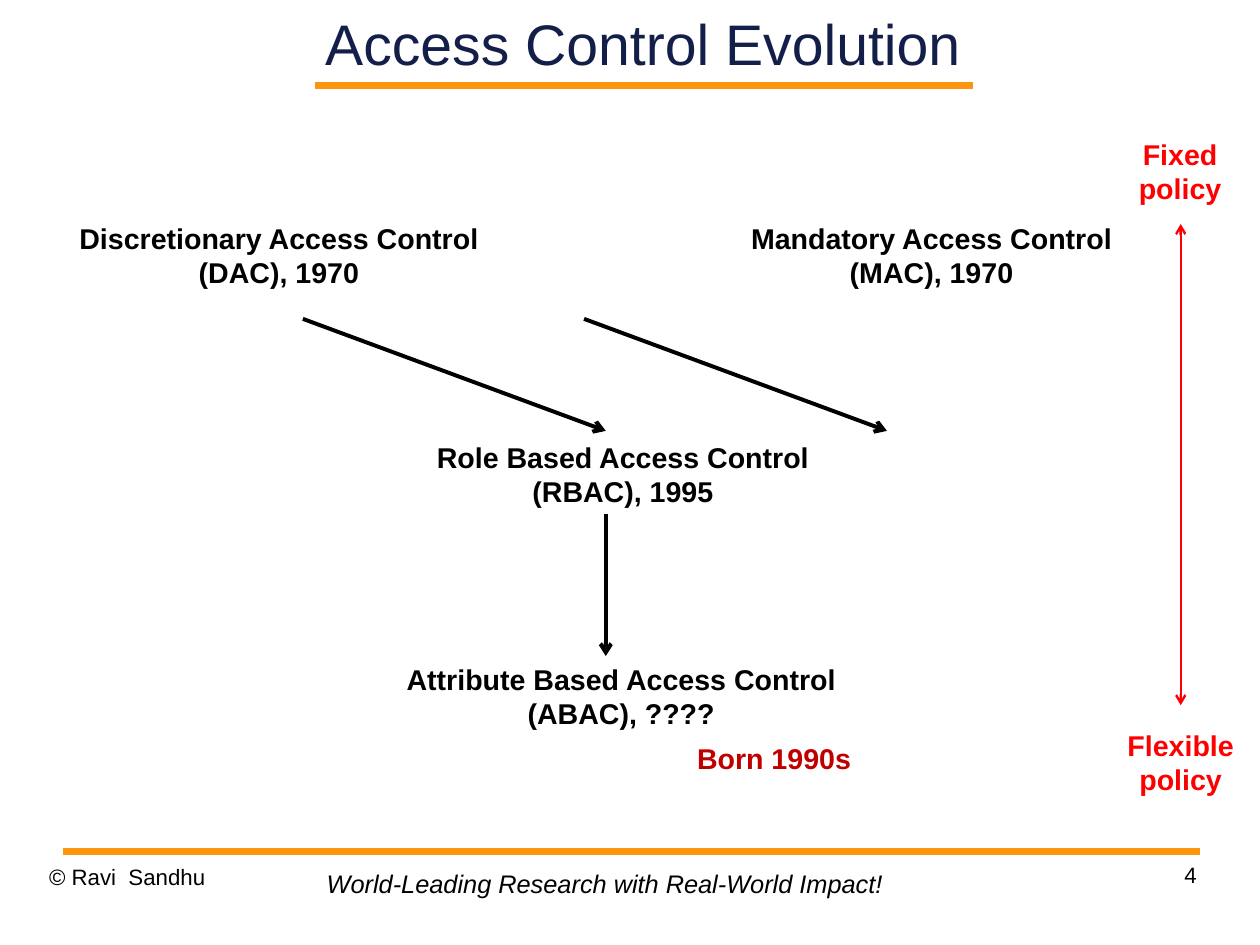
import pptx
import pptx.util
import pptx.dml.color
import pptx.enum.shapes
import pptx.enum.text
from lxml import etree

Inches, Pt = pptx.util.Inches, pptx.util.Pt
RGB = pptx.dml.color.RGBColor
ALIGN = pptx.enum.text.PP_ALIGN
ANCHOR = pptx.enum.text.MSO_ANCHOR

BLACK = RGB(0x00, 0x00, 0x00)
NAVY = RGB(0x13, 0x1F, 0x49)
ORANGE = RGB(0xFF, 0x95, 0x0E)
RED = RGB(0xFF, 0x00, 0x00)
DARK = RGB(0xC0, 0x00, 0x00)
FONT = "Arial"
PAD = (0.1, 0.05)

# Slide size: 28 by 21 cm, in inches
WIDE, HIGH = 28 / 2.54, 21 / 2.54

# Content: text and box (left, top, width, height)
TITLE = ("Access Control Evolution", (2.41, 0, 6.43, 0.75))
MODELS = [
    ("Discretionary Access Control (DAC), 1970", (0.59, 1.88, 3.7, 0.71)),
    ("Mandatory Access Control (MAC), 1970", (6.3, 1.88, 3.7, 0.71)),
    ("Role Based Access Control (RBAC), 1995", (3.6, 3.8, 3.7, 0.71)),
    ("Attribute Based Access Control (ABAC), ????", (3.38, 5.74, 4.11, 0.71)),
]
BORN = ("Born 1990s", (6, 6.43, 1.56, 0.4))
POLICY = [
    ("Fixed\npolicy", (9.86, 1.15, 0.93, 0.71)),
    ("Flexible\npolicy", (9.76, 6.32, 1.14, 0.71)),
]
OWNER = ("© Ravi  Sandhu", (0.43, 7.55, 2.57, 0.57))
NUMBER = ("4", (7.9, 7.53, 2.57, 0.57))
MOTTO = ("World-Leading Research with Real-World Impact!",
         (2.76, 7.55, 5.08, 0.37))

# Lines: start and end points
RULES = [((2.76, 0.75), (8.51, 0.75)), ((0.55, 7.45), (10.5, 7.45))]
STEPS = [
    ((2.65, 2.79), (5.3, 3.77)),
    ((5.11, 2.79), (7.76, 3.77)),
    ((5.3, 4.5), (5.3, 5.74)),
]
SCALE = ((10.33, 1.96), (10.33, 6.17))


def add_text(slide, text, box, size=18, color=BLACK, bold=False, italic=False,
             align=ALIGN.LEFT, anchor=ANCHOR.TOP, pad=PAD, wrap=True,
             space=None):
    frame = slide.shapes.add_textbox(*map(Inches, box)).text_frame
    frame.word_wrap = wrap
    frame.vertical_anchor = anchor
    frame.margin_left = frame.margin_right = Inches(pad[0])
    frame.margin_top = frame.margin_bottom = Inches(pad[1])
    frame.text = text
    for para in frame.paragraphs:
        para.alignment = align
        if space:
            para.line_spacing = space
        for run in para.runs:
            font = run.font
            font.name, font.size = FONT, Pt(size)
            font.bold, font.italic = bold, italic
            font.color.rgb = color


def add_line(slide, start, end, color, width, heads=()):
    kind = pptx.enum.shapes.MSO_CONNECTOR.STRAIGHT
    line = slide.shapes.add_connector(kind, *map(Inches, start + end))
    line.line.color.rgb = color
    line.line.width = Pt(width)
    props = line._element.spPr
    stroke = props.find(pptx.oxml.ns.qn("a:ln"))
    for head in heads:
        etree.SubElement(stroke, pptx.oxml.ns.qn("a:" + head), type="arrow")
    etree.SubElement(props, pptx.oxml.ns.qn("a:effectLst"))


def main():
    deck = pptx.Presentation()
    deck.slide_width, deck.slide_height = Inches(WIDE), Inches(HIGH)
    slide = deck.slides.add_slide(deck.slide_layouts[6])

    # Rules and footer
    for start, end in RULES:
        add_line(slide, start, end, ORANGE, 4.31)
    add_text(slide, *OWNER, size=14, pad=(0, 0), space=1.01)
    add_text(slide, *NUMBER, size=14, pad=(0, 0), space=1.01,
             align=ALIGN.RIGHT)
    add_text(slide, *MOTTO, size=16, italic=True, wrap=False)

    # Title
    add_text(slide, *TITLE, size=36, color=NAVY, align=ALIGN.CENTER,
             anchor=ANCHOR.MIDDLE, pad=(0, 0))

    # Models and the steps between them
    for text, box in MODELS:
        add_text(slide, text, box, bold=True, align=ALIGN.CENTER)
    for start, end in STEPS:
        add_line(slide, start, end, BLACK, 2.5, heads=["tailEnd"])

    # Policy scale
    add_line(slide, *SCALE, RED, 1.5, heads=["headEnd", "tailEnd"])
    for text, box in POLICY:
        add_text(slide, text, box, color=RED, bold=True, align=ALIGN.CENTER,
                 wrap=False)
    add_text(slide, *BORN, color=DARK, bold=True, wrap=False)

    deck.save("out.pptx")


if __name__ == "__main__":
    main()
